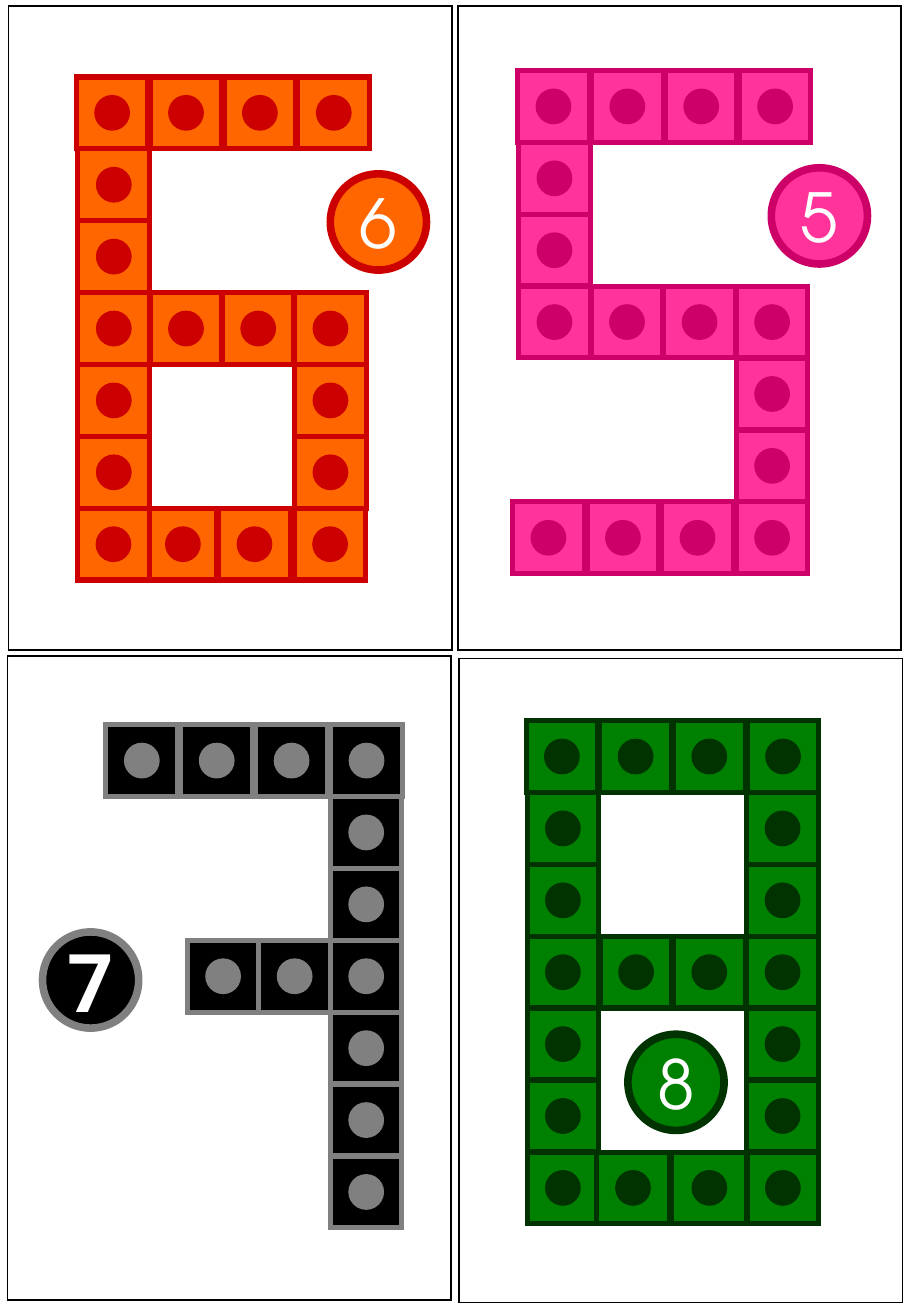
from dataclasses import dataclass, field

from lxml import etree
from pptx import Presentation
from pptx.dml.color import RGBColor
from pptx.enum.shapes import MSO_SHAPE
from pptx.enum.text import MSO_ANCHOR, PP_ALIGN
from pptx.oxml.ns import qn
from pptx.util import Pt

RECT, OVAL = MSO_SHAPE.RECTANGLE, MSO_SHAPE.OVAL
MIDDLE, CENTER = MSO_ANCHOR.MIDDLE, PP_ALIGN.CENTER

PANEL_W, PANEL_H = 262.8, 381.6
TILE, DOT, BADGE = 42.5, 20.2, 57
ROW_PITCH = 42.6
MIDDLE_ROW, LAST_ROW = 3, 6


@dataclass(frozen=True)
class Theme:
    white: str = "FFFFFF"
    black: str = "000000"
    orange: str = "FF6600"
    red: str = "CC0000"
    pink: str = "FF3399"
    crimson: str = "CC0066"
    gray: str = "808080"
    green: str = "008000"
    dark_green: str = "003300"
    thin_line: float = 1
    tile_line: float = 3
    badge_line: float = 4.5
    digit_size: int = 40
    bold_size: int = 48
    light_font: str = "TeX Gyre Adventor"
    bold_font: str = "Roboto"


THEME = Theme()


@dataclass
class Card:
    digit: str
    panel: tuple
    badge: tuple
    fill: str
    accent: str
    top: float
    columns: tuple  # left edges in the top row, the middle rows and the last row
    rows: str
    bold: bool = False
    odd_widths: dict = field(default_factory=dict)  # (row, column): width


def steps(start, pitch):
    return [start + pitch * i for i in range(4)]


CARDS = [
    Card("6", (5, 3.6), (195.8, 103), THEME.orange, THEME.red, 45.6,
         (steps(45.2, 43.8), steps(46.2, 42.8), (46, 88.6, 129.6, 174.4)),
         "#### #... #... #### #..# #..# ####", odd_widths={(6, 1): 39.6}),
    Card("5", (271.4, 3.6), (457.2, 99.4), THEME.pink, THEME.crimson, 41.8,
         (steps(306.8, 43.8), steps(307.4, 43), steps(303.8, 44.2)),
         "#### #... #... #### ...# ...# ####"),
    Card("7", (4.4, 388.8), (25.2, 552.2), THEME.black, THEME.gray, 429.4,
         (steps(62.8, 44.4), steps(68.6, 42.4), steps(68.6, 42.4)),
         "#### ...# ...# .### ...# ...# ...#", bold=True),
    Card("8", (272.2, 390.2), (372.2, 612.8), THEME.green, THEME.dark_green, 427,
         (steps(311.8, 43.7), steps(312.4, 43.4), (312.4, 353.6, 398.2, 442.8)),
         "#### #..# #..# #### #..# #..# ####",
         odd_widths={(6, 1): 43.2, (6, 2): 44.6}),
]


def add_outlined(slide, kind, left, top, width, height, fill, line, line_width):
    sp = slide.shapes.add_shape(kind, Pt(left), Pt(top), Pt(width), Pt(height))
    sp.shadow.inherit = False
    sp.fill.solid()
    sp.fill.fore_color.rgb = RGBColor.from_string(fill)
    sp.line.color.rgb = RGBColor.from_string(line)
    sp.line.width = Pt(line_width)
    ln = sp._element.spPr.find(qn("a:ln"))
    etree.SubElement(ln, qn("a:miter"), lim="800000")
    return sp


def write_text(sp, text, *, size, font, color, bold=False):
    tf = sp.text_frame
    tf.margin_left = tf.margin_right = tf.margin_top = tf.margin_bottom = 0
    tf.vertical_anchor = MIDDLE
    p = tf.paragraphs[0]
    p.alignment = CENTER
    r = p.add_run()
    r.text = text
    r.font.size = Pt(size)
    r.font.name = font
    r.font.bold = bold
    r.font.color.rgb = RGBColor.from_string(color)


def add_tile(slide, card, left, top, width):
    """Add a square with a dot at its centre."""
    add_outlined(slide, RECT, left, top, width, TILE,
                 card.fill, card.accent, THEME.tile_line)
    add_outlined(slide, OVAL, left + (width - DOT) / 2, top + (TILE - DOT) / 2,
                 DOT, DOT, card.accent, card.accent, THEME.thin_line)


def add_tiles(slide, card):
    top_row, middle_rows, last_row = card.columns
    for row, pattern in enumerate(card.rows.split()):
        lefts = {0: top_row, LAST_ROW: last_row}.get(row, middle_rows)
        for col, mark in enumerate(pattern):
            if mark == "#":
                add_tile(slide, card, lefts[col], card.top + row * ROW_PITCH,
                         card.odd_widths.get((row, col), TILE))


def add_badge(slide, card):
    sp = add_outlined(slide, OVAL, *card.badge, BADGE, BADGE,
                      card.fill, card.accent, THEME.badge_line)
    write_text(sp, card.digit, color=THEME.white, bold=card.bold,
               size=THEME.bold_size if card.bold else THEME.digit_size,
               font=THEME.bold_font if card.bold else THEME.light_font)


def add_card(slide, card):
    add_outlined(slide, RECT, *card.panel, PANEL_W, PANEL_H,
                 THEME.white, THEME.black, THEME.thin_line)
    add_tiles(slide, card)
    add_badge(slide, card)


def main():
    prs = Presentation()
    prs.slide_width, prs.slide_height = Pt(540), Pt(779.76)
    slide = prs.slides.add_slide(prs.slide_layouts[6])
    for card in CARDS:
        add_card(slide, card)
    prs.save("out.pptx")


if __name__ == "__main__":
    main()
